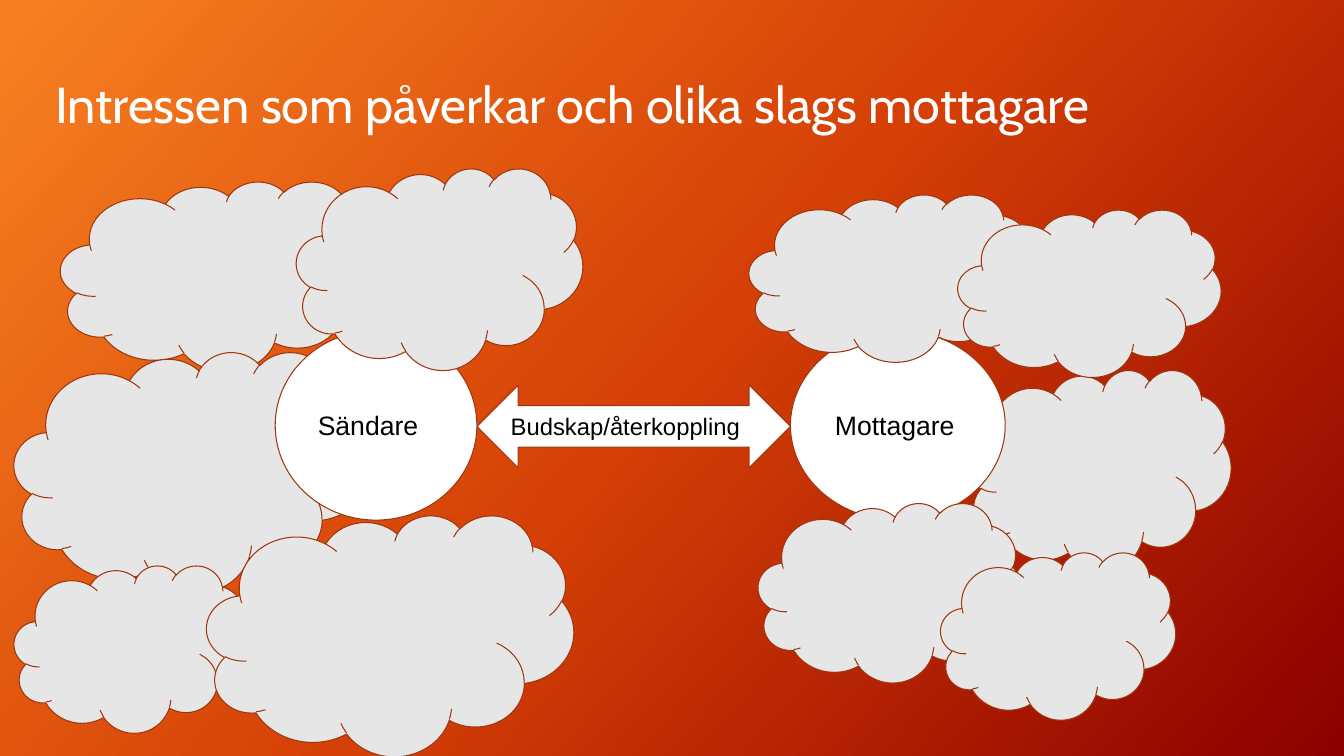
import copy
from dataclasses import dataclass

import pptx
import pptx.dml.color
import pptx.enum.shapes
import pptx.enum.text
import pptx.util
from pptx.dml.color import RGBColor
from pptx.enum.shapes import MSO_SHAPE
from pptx.util import Inches

WHITE = RGBColor(0xFF, 0xFF, 0xFF)
BLACK = RGBColor(0x00, 0x00, 0x00)
CLOUD_GREY = RGBColor(0xE7, 0xE6, 0xE6)
OUTLINE = RGBColor(0x9D, 0x36, 0x0E)
GRADIENT = (
    (0.0, RGBColor(0xF7, 0x81, 0x21)),
    (0.5, RGBColor(0xD5, 0x40, 0x06)),
    (1.0, RGBColor(0x8C, 0x00, 0x00)),
)


@dataclass(frozen=True)
class Figure:
    left: float
    top: float
    width: float
    height: float
    kind: MSO_SHAPE = MSO_SHAPE.CLOUD
    fill: RGBColor = CLOUD_GREY
    text: str = ""
    size: int = 19


# From back to front
FIGURES = (
    Figure(9.6, 3.67, 2.61, 2),
    Figure(0.6, 1.8, 3.21, 1.88),
    Figure(7.84, 3.28, 2.13, 1.88, MSO_SHAPE.OVAL, WHITE, "Mottagare"),
    Figure(4.73, 3.82, 3.11, 0.82, MSO_SHAPE.LEFT_RIGHT_ARROW, WHITE,
           "Budskap/återkoppling", 17),
    Figure(0.14, 3.49, 3.53, 2.39),
    Figure(2.73, 3.28, 2, 1.88, MSO_SHAPE.OVAL, WHITE, "Sändare"),
    Figure(0.14, 5.61, 2.33, 1.66),
    Figure(2.05, 5.11, 3.64, 2.39),
    Figure(2.94, 1.67, 2.84, 2),
    Figure(7.43, 1.93, 2.84, 1.66),
    Figure(9.5, 2.08, 2.61, 1.66),
    Figure(7.52, 4.99, 2.61, 1.78),
    Figure(9.33, 5.48, 2.33, 1.66),
)


def paint_background(slide: pptx.slide.Slide) -> None:
    fill = slide.background.fill
    fill.gradient()
    fill.gradient_angle = 360 - 42  # counter-clockwise
    # The default gradient has two stops; add a third
    stop_list = slide.element.xpath(".//p:bg//a:gsLst")[0]
    stop_list.append(copy.deepcopy(stop_list[-1]))
    for stop, (position, color) in zip(fill.gradient_stops, GRADIENT):
        stop.position = position
        stop.color.rgb = color


def write_text(shape: pptx.shapes.base.BaseShape, text: str, font_name: str,
               size: int, color: RGBColor) -> None:
    shape.text_frame.text = text
    shape.text_frame.word_wrap = True
    shape.text_frame.vertical_anchor = pptx.enum.text.MSO_ANCHOR.MIDDLE
    paragraph = shape.text_frame.paragraphs[0]
    paragraph.alignment = pptx.enum.text.PP_ALIGN.LEFT
    paragraph.font.name = font_name
    paragraph.font.size = pptx.util.Pt(size)
    paragraph.font.color.rgb = color


def set_title(slide: pptx.slide.Slide, text: str) -> None:
    title = slide.shapes.title
    title.left, title.top = Inches(0.45), Inches(0.65)
    title.width, title.height = Inches(12.42), Inches(0.83)
    write_text(title, text, "Cabin", 36, WHITE)
    title.text_frame.auto_size = pptx.enum.text.MSO_AUTO_SIZE.NONE
    title.text_frame.paragraphs[0].line_spacing = 0.9


def draw_figure(slide: pptx.slide.Slide, figure: Figure) -> None:
    shape = slide.shapes.add_shape(
        figure.kind, Inches(figure.left), Inches(figure.top),
        Inches(figure.width), Inches(figure.height))
    shape.shadow.inherit = False
    shape.fill.solid()
    shape.fill.fore_color.rgb = figure.fill
    shape.line.color.rgb = OUTLINE
    shape.line.width = pptx.util.Pt(0.75)
    if figure.text:
        write_text(shape, figure.text, "Arial", figure.size, BLACK)
        frame = shape.text_frame
        frame.margin_left = frame.margin_right = Inches(0.13)
        frame.margin_top = frame.margin_bottom = Inches(0.13)


def main() -> None:
    presentation = pptx.Presentation()
    presentation.slide_width = Inches(13.33)
    presentation.slide_height = Inches(7.5)
    slide = presentation.slides.add_slide(presentation.slide_layouts[5])

    # Background and title
    paint_background(slide)
    set_title(slide, "Intressen som påverkar och olika slags mottagare")

    # Sender, message, receiver and the surrounding interests
    for figure in FIGURES:
        draw_figure(slide, figure)

    presentation.save("out.pptx")


if __name__ == "__main__":
    main()
